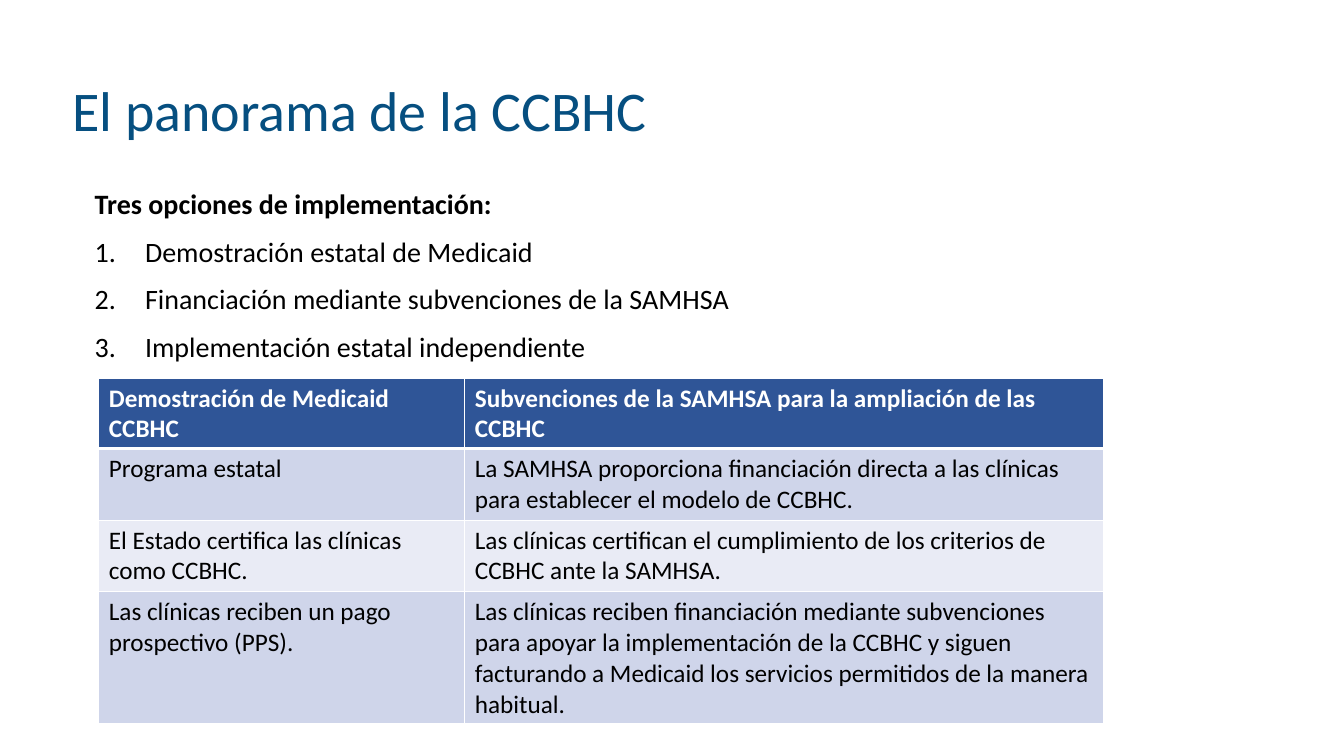
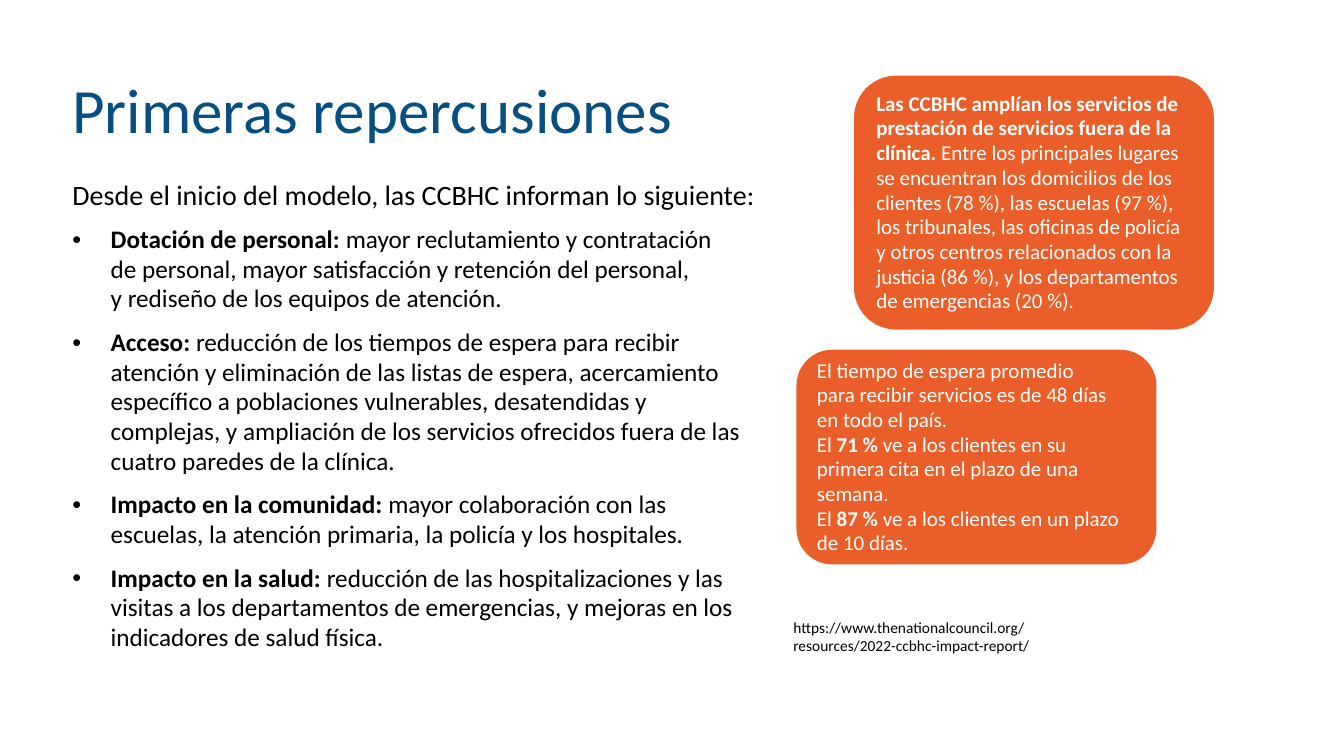
import pptx
import pptx.util
import pptx.dml.color
import pptx.enum.shapes
import pptx.enum.text
import pptx.oxml
import pptx.oxml.ns

RGBColor = pptx.dml.color.RGBColor
Pt = pptx.util.Pt
ANCHOR = pptx.enum.text.MSO_ANCHOR
NAMESPACE = pptx.oxml.ns.nsdecls("a")

# Shared style
PX = 9144  # 100 px to the inch
FONT = "Calibri"
BLUE = RGBColor(0x06, 0x4F, 0x80)
ORANGE = RGBColor(0xEA, 0x5E, 0x29)
BLACK = RGBColor(0, 0, 0)
WHITE = RGBColor(0xFF, 0xFF, 0xFF)
HEADER_FILL = RGBColor(0x2F, 0x55, 0x97)
BAND_FILLS = (RGBColor(0xCF, 0xD5, 0xEA), RGBColor(0xE9, 0xEB, 0xF5))
TITLE_BOX = (62, 40, 1210, 145)
NUMBERED = '<a:buAutoNum %s type="arabicPeriod"/>' % NAMESPACE
BULLETED = '<a:buFont %s typeface="Arial"/>|<a:buChar %s char="•"/>' % (NAMESPACE, NAMESPACE)

# Content: a paragraph is a list of (text, bold) runs
OPTIONS_TITLE, OPTIONS_TITLE_SIZE = "El panorama de la CCBHC", 40
OPTIONS_BOX = (84, 180, 1025, 459)
OPTIONS_LEAD = [("Tres opciones de implementación:", True)]
OPTIONS = [
    [("Demostración estatal de Medicaid", False)],
    [("Financiación mediante subvenciones de la SAMHSA", False)],
    [("Implementación estatal independiente", False)],
]

COMPARISON_AT = (98, 375)
COMPARISON_WIDTHS = (363, 634)
COMPARISON_HEIGHTS = (70, 71, 71, 131)
COMPARISON = [
    ("Demostración de Medicaid CCBHC",
     "Subvenciones de la SAMHSA para la ampliación de las CCBHC"),
    ("Programa estatal",
     "La SAMHSA proporciona financiación directa a las clínicas para establecer "
     "el modelo de CCBHC."),
    ("El Estado certifica las clínicas como CCBHC.",
     "Las clínicas certifican el cumplimiento de los criterios de CCBHC ante la SAMHSA."),
    ("Las clínicas reciben un pago prospectivo (PPS).",
     "Las clínicas reciben financiación mediante subvenciones para apoyar la "
     "implementación de la CCBHC y siguen facturando a Medicaid los servicios "
     "permitidos de la manera habitual."),
]

IMPACT_TITLE, IMPACT_TITLE_SIZE = "Primeras repercusiones", 45
IMPACT_BOX = (62, 171, 704, 468)
IMPACT_LEAD = [("Desde el inicio del modelo, las CCBHC informan lo siguiente:", False)]
IMPACTS = [
    [("Dotación de personal:", True),
     (" mayor reclutamiento y contratación\nde personal, mayor satisfacción y "
      "retención del personal,\ny rediseño de los equipos de atención.", False)],
    [("Acceso:", True),
     (" reducción de los tiempos de espera para recibir atención y eliminación de "
      "las listas de espera, acercamiento específico a poblaciones vulnerables, "
      "desatendidas y complejas, y ampliación de los servicios ofrecidos fuera de "
      "las cuatro paredes de la clínica.", False)],
    [("Impacto en la comunidad:", True),
     (" mayor colaboración con las escuelas, la atención primaria, la policía y "
      "los hospitales.", False)],
    [("Impacto en la salud:", True),
     (" reducción de las hospitalizaciones y las visitas a los departamentos de "
      "emergencias, y mejoras en los indicadores de salud física.", False)],
]
CARDS = [
    ((847, 75, 357, 252), [
        [("Las CCBHC amplían los servicios de prestación de servicios fuera de la "
          "clínica. ", True),
         ("Entre los principales lugares se encuentran los domicilios de los "
          "clientes (78 %), las escuelas (97 %), los tribunales, las oficinas de "
          "policía\ny otros centros relacionados con la justicia (86 %), y los "
          "departamentos de emergencias (20 %).", False)],
    ]),
    ((790, 347, 357, 213), [
        [("El tiempo de espera promedio\npara recibir servicios es de 48 días\n"
          "en todo el país.", False)],
        [("El ", False), ("71 %", True),
         (" ve a los clientes en su primera cita en el plazo de una semana.", False)],
        [("El ", False), ("87 %", True),
         (" ve a los clientes en un plazo de 10 días.", False)],
    ]),
]
SOURCE_BOX = (777, 608, 320, 47)
SOURCE = [("https://www.thenationalcouncil.org/resources/2022-ccbhc-impact-report/", False)]


def scaled(lengths):
    return [length * PX for length in lengths]


def write(frame, paragraphs, size, color, spacing=1.0, before=0, bullet="", indent=0):
    """Fill a frame, adding after any text it already has."""
    frame.word_wrap = True
    for runs in paragraphs:
        is_first = not frame.paragraphs[0].runs
        paragraph = frame.paragraphs[0] if is_first else frame.add_paragraph()
        paragraph.alignment = pptx.enum.text.PP_ALIGN.LEFT
        paragraph.line_spacing = spacing
        paragraph.space_before = Pt(0 if is_first else before)
        if bullet:
            properties = paragraph._p.get_or_add_pPr()
            properties.set("marL", str(indent * PX))
            properties.set("indent", str(-indent * PX))
            for element in bullet.split("|"):
                properties.append(pptx.oxml.parse_xml(element))
        for text, bold in runs:
            for number, line in enumerate(text.split("\n")):
                if number:
                    paragraph.add_line_break()
                run = paragraph.add_run()
                run.text = line
                run.font.name = FONT
                run.font.size = Pt(size)
                run.font.bold = bold
                run.font.color.rgb = color


def add_text(slide, box, paragraphs, size, color=BLACK, spacing=1.0):
    frame = slide.shapes.add_textbox(*scaled(box)).text_frame
    write(frame, paragraphs, size, color, spacing)
    return frame


def add_titled_slide(deck, title, size):
    slide = deck.slides.add_slide(deck.slide_layouts[6])
    frame = add_text(slide, TITLE_BOX, [[(title, False)]], size, BLUE, 0.9)
    frame.vertical_anchor = ANCHOR.MIDDLE
    return slide


def add_card(slide, box, paragraphs):
    card = slide.shapes.add_shape(
        pptx.enum.shapes.MSO_SHAPE.ROUNDED_RECTANGLE, *scaled(box))
    card.shadow.inherit = False
    card.fill.solid()
    card.fill.fore_color.rgb = ORANGE
    card.line.fill.background()
    card.text_frame.vertical_anchor = ANCHOR.MIDDLE
    write(card.text_frame, paragraphs, 15, WHITE, 0.98)


def set_borders(cell, top, bottom):
    """White cell borders; widths in points, one point at the sides."""
    properties = cell._tc.get_or_add_tcPr()
    for place, (side, width) in enumerate(
            (("lnL", 1), ("lnR", 1), ("lnT", top), ("lnB", bottom))):
        properties.insert(place, pptx.oxml.parse_xml(
            f'<a:{side} {NAMESPACE} w="{Pt(width)}"><a:solidFill>'
            f'<a:srgbClr val="{WHITE}"/></a:solidFill></a:{side}>'))


def add_comparison(slide):
    size = (sum(COMPARISON_WIDTHS), sum(COMPARISON_HEIGHTS))
    table = slide.shapes.add_table(
        len(COMPARISON), len(COMPARISON_WIDTHS), *scaled(COMPARISON_AT + size)).table
    for column, width in zip(table.columns, COMPARISON_WIDTHS):
        column.width = width * PX
    for row, height in zip(table.rows, COMPARISON_HEIGHTS):
        row.height = height * PX
    for r, texts in enumerate(COMPARISON):
        is_header = r == 0
        for c, text in enumerate(texts):
            cell = table.cell(r, c)
            cell.fill.solid()
            cell.fill.fore_color.rgb = HEADER_FILL if is_header else BAND_FILLS[(r - 1) % 2]
            set_borders(cell, 3 if r == 1 else 1, 3 if is_header else 1)
            write(cell.text_frame, [[(text, is_header)]], 18, WHITE if is_header else BLACK)


def main():
    deck = pptx.Presentation()
    deck.slide_width, deck.slide_height = scaled((1333, 750))

    # Implementation options
    slide = add_titled_slide(deck, OPTIONS_TITLE, OPTIONS_TITLE_SIZE)
    body = add_text(slide, OPTIONS_BOX, [OPTIONS_LEAD], 20)
    write(body, OPTIONS, 20, BLACK, before=10, bullet=NUMBERED, indent=50)
    add_comparison(slide)

    # Early impacts
    slide = add_titled_slide(deck, IMPACT_TITLE, IMPACT_TITLE_SIZE)
    body = add_text(slide, IMPACT_BOX, [IMPACT_LEAD], 20)
    write(body, IMPACTS, 18, BLACK, 0.98, before=10, bullet=BULLETED, indent=38)
    for box, paragraphs in CARDS:
        add_card(slide, box, paragraphs)
    add_text(slide, SOURCE_BOX, [SOURCE], 11)

    deck.save("out.pptx")


if __name__ == "__main__":
    main()
